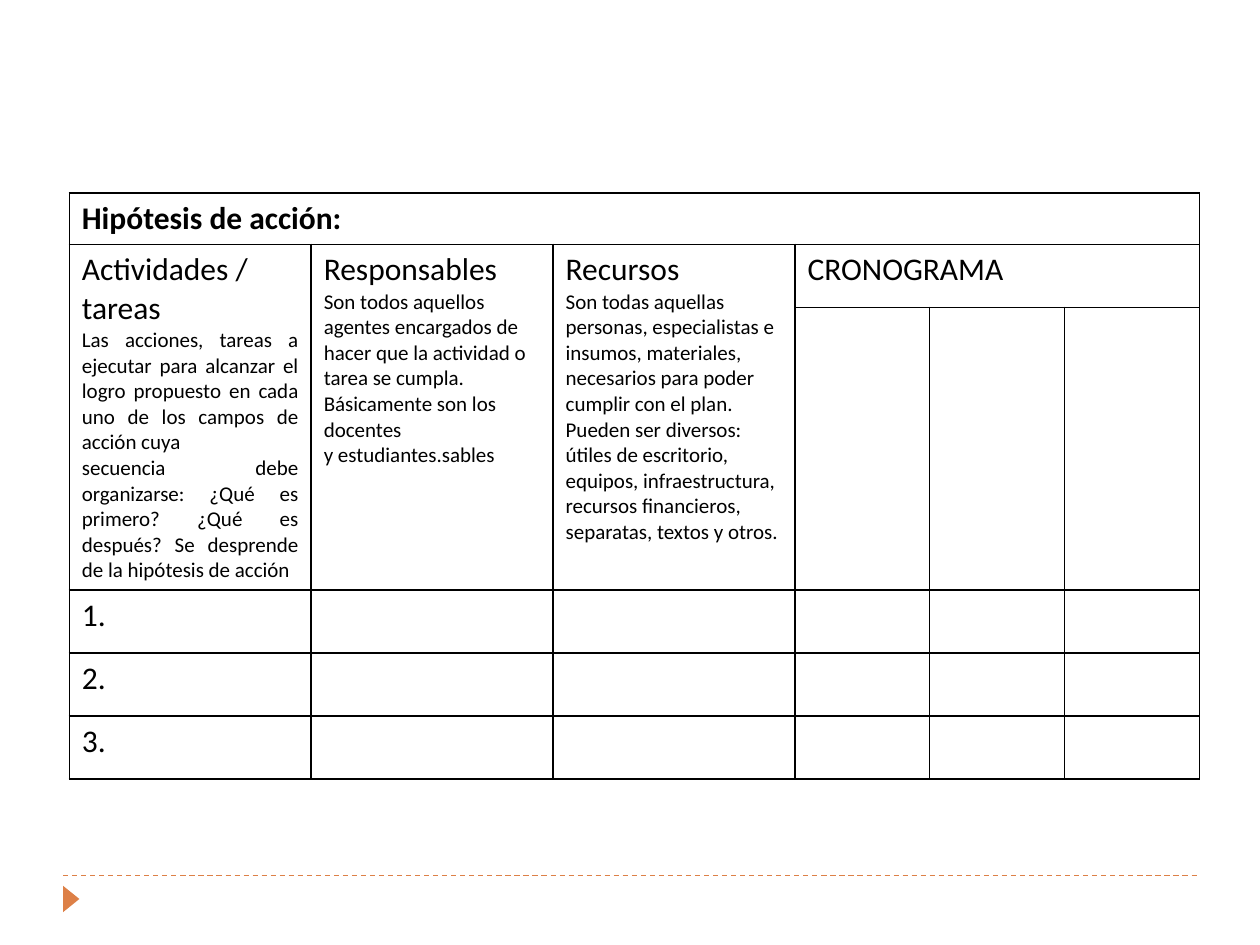
from lxml import etree
from pptx import Presentation
from pptx import util as u
from pptx.dml.color import RGBColor
from pptx.enum import dml, shapes, text
from pptx.oxml import ns

COLORS = {"ink": "000000", "paper": "FFFFFF", "accent": "DD8047"}
FONT = "Calibri"
COLUMN_WIDTHS = [1.92] * 3 + [1.07] * 3
ROW_HEIGHTS = [0.41, 0.5, 2.24] + [0.5] * 3
MERGES = [(0, 0, 0, 5), (1, 0, 2, 0), (1, 1, 2, 1), (1, 2, 2, 2), (1, 3, 1, 5)]
HEADINGS = [
    ("Actividades / tareas", [
        "Las acciones, tareas a ejecutar para alcanzar el logro propuesto en cada "
        "uno de los campos de acción cuya",
        "secuencia debe organizarse: ¿Qué es primero? ¿Qué es después? "
        "Se desprende de la hipótesis de acción",
    ], text.PP_ALIGN.JUSTIFY),
    ("Responsables", [
        "Son todos aquellos agentes encargados de hacer que la actividad o tarea "
        "se cumpla. Básicamente son los docentes",
        "y estudiantes.sables",
    ], text.PP_ALIGN.LEFT),
    ("Recursos", [
        "Son todas aquellas personas, especialistas e insumos, materiales, "
        "necesarios para poder cumplir con el plan.",
        "Pueden ser diversos: útiles de escritorio, equipos, infraestructura, "
        "recursos financieros, separatas, textos y otros.",
    ], text.PP_ALIGN.LEFT),
    ("CRONOGRAMA", [], text.PP_ALIGN.LEFT),
]


def rgb(name):
    """Return a palette colour."""
    return RGBColor.from_string(COLORS[name])


def style_cell(cell):
    """Give a cell thin dark borders and a plain fill."""
    properties = cell._tc.get_or_add_tcPr()
    for side in ("lnL", "lnR", "lnT", "lnB"):
        border = etree.SubElement(properties, ns.qn(f"a:{side}"), w=str(u.Pt(1)))
        fill = etree.SubElement(border, ns.qn("a:solidFill"))
        etree.SubElement(fill, ns.qn("a:srgbClr"), val=COLORS["ink"])
    cell.fill.solid()
    cell.fill.fore_color.rgb = rgb("paper")


def write_cell(cell, heading, details=(), align=text.PP_ALIGN.LEFT, bold=False):
    """Write a large heading and smaller paragraphs below it."""
    frame = cell.text_frame
    frame.text = "\n".join([heading, *details])
    for index, paragraph in enumerate(frame.paragraphs):
        paragraph.alignment = align if index else text.PP_ALIGN.LEFT
        paragraph.font.name = FONT
        paragraph.font.size = u.Pt(12 if index else 18)
        paragraph.font.bold = bold
        paragraph.font.color.rgb = rgb("ink")


def add_plan(slide, left, top, width, height):
    """Place the action plan table in the given box."""
    plan = slide.shapes.add_table(
        len(ROW_HEIGHTS), len(COLUMN_WIDTHS), left, top, width, height).table
    plan.first_row = plan.horz_banding = False
    for column, size in zip(plan.columns, COLUMN_WIDTHS):
        column.width = u.Inches(size)
    for row, size in zip(plan.rows, ROW_HEIGHTS):
        row.height = u.Inches(size)
    for cell in plan.iter_cells():
        style_cell(cell)
    for first_row, first_column, last_row, last_column in MERGES:
        plan.cell(first_row, first_column).merge(plan.cell(last_row, last_column))

    write_cell(plan.cell(0, 0), "Hipótesis de acción:", bold=True)
    for column, (heading, details, align) in enumerate(HEADINGS):
        write_cell(plan.cell(1, column), heading, details, align)
    for number in range(1, 4):
        write_cell(plan.cell(number + 2, 0), f"{number}.")


def add_footer(slide, left, top, width):
    """Place the dashed rule and the pointer below its left end."""
    rule = slide.shapes.add_connector(
        shapes.MSO_CONNECTOR.STRAIGHT, left, top, left + width, top)
    rule.line.color.rgb = rgb("accent")
    rule.line.width = u.Pt(0.75)
    rule.line.dash_style = dml.MSO_LINE.DASH
    etree.SubElement(rule._element.spPr, ns.qn("a:effectLst"))

    pointer = slide.shapes.add_shape(
        shapes.MSO_SHAPE.ISOSCELES_TRIANGLE, left - u.Inches(0.04),
        top + u.Inches(0.12), u.Inches(0.21), u.Inches(0.13))
    pointer.rotation = 90
    pointer.shadow.inherit = False
    pointer.fill.solid()
    pointer.fill.fore_color.rgb = rgb("accent")
    pointer.line.fill.background()


def main():
    """Build and save the slide."""
    deck = Presentation()
    deck.slide_width, deck.slide_height = u.Inches(10), u.Inches(7.5)
    slide = deck.slides.add_slide(deck.slide_layouts[6])
    add_footer(slide, u.Inches(0.5), u.Inches(6.95), u.Inches(9))
    add_plan(slide, u.Inches(0.55), u.Inches(1.53),
             u.Inches(sum(COLUMN_WIDTHS)), u.Inches(sum(ROW_HEIGHTS)))
    deck.save("out.pptx")


if __name__ == "__main__":
    main()
